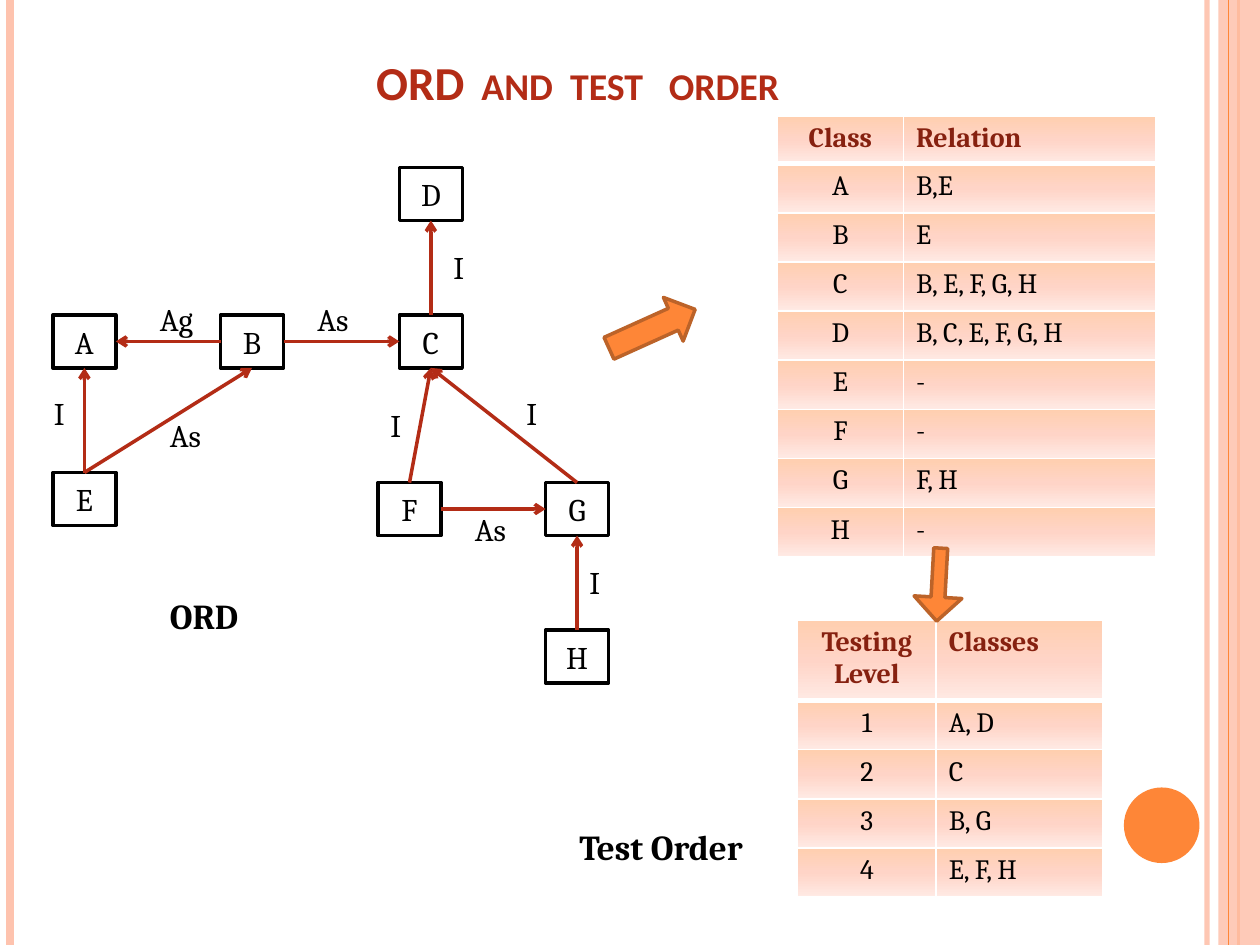
from dataclasses import dataclass
from typing import Any

from lxml.etree import SubElement
from pptx import Presentation
from pptx.dml.color import RGBColor
from pptx.enum.shapes import MSO_CONNECTOR, MSO_SHAPE
from pptx.enum.text import MSO_ANCHOR, PP_ALIGN
from pptx.oxml.ns import qn
from pptx.util import Inches, Pt

BLACK = RGBColor(0x00, 0x00, 0x00)
WHITE = RGBColor(0xFF, 0xFF, 0xFF)
RED = RGBColor(0xB3, 0x2C, 0x16)
DARK_RED = RGBColor(0x86, 0x21, 0x10)
ORANGE = RGBColor(0xFE, 0x86, 0x37)
BROWN = RGBColor(0xBC, 0x63, 0x29)
PINK = RGBColor(0xFE, 0xC3, 0xAE)
CELL_STOPS = (
    (0, RGBColor(0xFF, 0xCF, 0xAF)),
    (50, RGBColor(0xFF, 0xD4, 0xC7)),
    (100, RGBColor(0xFF, 0xEA, 0xE4)),
)
TOP, LEFT, BOTTOM, RIGHT = range(4)
BOX_WIDTH, BOX_HEIGHT = 0.5, 0.42
HEADER_HEIGHT, ROW_HEIGHT = 0.38, 0.39


@dataclass(frozen=True)
class Stripe:
    x: float
    color: RGBColor
    weight: float
    opacity: int = 100


@dataclass(frozen=True)
class ClassBox:
    name: str
    x: float
    y: float


@dataclass(frozen=True)
class Relation:
    source: str
    source_side: int
    target: str
    target_side: int
    label: str
    label_x: float
    label_y: float


@dataclass(frozen=True)
class Grid:
    x: float
    y: float
    widths: tuple[float, ...]
    header_height: float
    rows: tuple[tuple[str, str], ...]


@dataclass(frozen=True)
class BlockArrow:
    frame: tuple[float, float, float, float]
    rotation: float
    shaft: float


BACK_STRIPES = (
    Stripe(9.58, PINK, 3, 93),
    Stripe(0.08, PINK, 4.5),
    Stripe(9.83, ORANGE, 1.5),
)
FRONT_STRIPE = Stripe(9.75, ORANGE, 0.75)
CLASS_BOXES = (
    ClassBox("A", 0.42, 2.5), ClassBox("E", 0.42, 3.75),
    ClassBox("H", 4.33, 5), ClassBox("F", 3, 3.83),
    ClassBox("G", 4.33, 3.83), ClassBox("B", 1.75, 2.5),
    ClassBox("C", 3.17, 2.5), ClassBox("D", 3.17, 1.33),
)
RELATIONS = (
    Relation("C", TOP, "D", BOTTOM, "I", 3.5, 1.92),
    Relation("H", TOP, "G", BOTTOM, "I", 4.58, 4.42),
    Relation("F", RIGHT, "G", LEFT, "As", 3.67, 4),
    Relation("G", TOP, "C", BOTTOM, "I", 4.08, 3.08),
    Relation("F", TOP, "C", BOTTOM, "I", 3, 3.17),
    Relation("B", LEFT, "A", RIGHT, "Ag", 1.17, 2.33),
    Relation("E", TOP, "A", BOTTOM, "I", 0.33, 3.08),
    Relation("E", TOP, "B", BOTTOM, "As", 1.25, 3.25),
    Relation("B", RIGHT, "C", LEFT, "As", 2.42, 2.33),
)
GRIDS = (
    Grid(6.17, 0.92, (1, 2), HEADER_HEIGHT, (
        ("Class", "Relation"), ("A", "B,E"), ("B", "E"), ("C", "B, E, F, G, H"),
        ("D", "B, C, E, F, G, H"), ("E", "-"), ("F", "-"), ("G", "F, H"), ("H", "-"),
    )),
    Grid(6.33, 4.92, (1.1, 1.32), 0.64, (
        ("Testing Level", "Classes"), ("1", "A, D"), ("2", "C"), ("3", "B, G"), ("4", "E, F, H"),
    )),
)
BLOCK_ARROWS = (
    BlockArrow((4.8, 2.42, 0.75, 0.38), 335.7, 0.5),
    BlockArrow((7.16, 4.45, 0.58, 0.38), 93.2, 0.29),
)


def apply_format(target: Any, values: dict[str, Any]) -> None:
    for name, value in values.items():
        setattr(target, name, value)


def write_span(para: Any, text: str, size: float, color: RGBColor = BLACK,
               bold: bool = False, font: str = "Cambria") -> Any:
    span = para.add_run()
    span.text = text
    apply_format(span.font, {"name": font, "size": Pt(size), "bold": bold})
    span.font.color.rgb = color
    return span


def set_opacity(element: Any, percent: int) -> None:
    color = element.find(".//" + qn("a:srgbClr"))
    SubElement(color, qn("a:alpha"), val=str(percent * 1000))


def add_box(page: Any, kind: Any, frame: tuple, fill: RGBColor, line: RGBColor | None = None) -> Any:
    box = page.shapes.add_shape(kind, *map(Inches, frame))
    box.shadow.inherit = False
    box.fill.solid()
    box.fill.fore_color.rgb = fill
    if line is None:
        box.line.fill.background()
    else:
        box.line.color.rgb = line
        box.line.width = Pt(2)
    return box


def add_line(page: Any, color: RGBColor, weight: float, x: float = 0, length: float = 0) -> Any:
    line = page.shapes.add_connector(
        MSO_CONNECTOR.STRAIGHT, Inches(x), 0, Inches(x), Inches(length))
    line.line.color.rgb = color
    line.line.width = Pt(weight)
    SubElement(line.element.spPr, qn("a:effectLst"))
    return line


def add_stripe(page: Any, stripe: Stripe) -> None:
    line = add_line(page, stripe.color, stripe.weight, stripe.x, 7.5)
    if stripe.opacity < 100:
        set_opacity(line.element.spPr, stripe.opacity)


def add_label(page: Any, frame: tuple, text: str, size: float, bold: bool, wrap: bool) -> None:
    label = page.shapes.add_textbox(*map(Inches, frame))
    label.text_frame.word_wrap = wrap
    write_span(label.text_frame.paragraphs[0], text, size, bold=bold)


def add_title(page: Any) -> None:
    box = page.shapes.add_textbox(*map(Inches, (0.5, 0.3, 8.17, 0.62)))
    apply_format(box.text_frame, {"word_wrap": True, "vertical_anchor": MSO_ANCHOR.BOTTOM})
    para = box.text_frame.paragraphs[0]
    para.alignment = PP_ALIGN.CENTER
    span = write_span(para, "ORD  and  test   order", 27, RED, True, "Calibri")
    span._r.get_or_add_rPr().set("cap", "small")


def add_class_box(page: Any, item: ClassBox) -> Any:
    box = add_box(page, MSO_SHAPE.RECTANGLE, (item.x, item.y, BOX_WIDTH, BOX_HEIGHT), WHITE, BLACK)
    box.text_frame.vertical_anchor = MSO_ANCHOR.MIDDLE
    para = box.text_frame.paragraphs[0]
    para.alignment = PP_ALIGN.CENTER
    write_span(para, item.name, 18)
    return box


def add_relation(page: Any, item: Relation, boxes: dict[str, Any]) -> None:
    line = add_line(page, RED, 2)
    line.begin_connect(boxes[item.source], item.source_side)
    line.end_connect(boxes[item.target], item.target_side)
    SubElement(line.element.spPr.find(qn("a:ln")), qn("a:tailEnd"), type="arrow")
    width = 0.27 if item.label == "I" else 0.5
    add_label(page, (item.label_x, item.label_y, width, 0.4), item.label, 18, False, False)


def style_cell(cell: Any, header: bool) -> None:
    properties = cell._tc.get_or_add_tcPr()
    for side in "LRTB":
        weight = 3 if header and side == "B" else 1
        border = SubElement(properties, qn(f"a:ln{side}"), w=str(Pt(weight)))
        SubElement(SubElement(border, qn("a:solidFill")), qn("a:srgbClr"), val=str(WHITE))
    gradient = SubElement(properties, qn("a:gradFill"))
    stops = SubElement(gradient, qn("a:gsLst"))
    for position, color in CELL_STOPS:
        stop = SubElement(stops, qn("a:gs"), pos=str(position * 1000))
        SubElement(stop, qn("a:srgbClr"), val=str(color))
    SubElement(gradient, qn("a:lin"), ang="5400000", scaled="0")


def add_grid(page: Any, grid: Grid) -> None:
    heights = [grid.header_height] + [ROW_HEIGHT] * (len(grid.rows) - 1)
    frame = (grid.x, grid.y, sum(grid.widths), sum(heights))
    table = page.shapes.add_table(len(heights), len(grid.widths), *map(Inches, frame)).table
    apply_format(table, {"first_row": False, "horz_banding": False})
    for column, width in zip(table.columns, grid.widths):
        column.width = Inches(width)
    for index, (height, texts) in enumerate(zip(heights, grid.rows)):
        header = index == 0
        table.rows[index].height = Inches(height)
        for position, text in enumerate(texts):
            cell = table.cell(index, position)
            style_cell(cell, header)
            para = cell.text_frame.paragraphs[0]
            para.alignment = PP_ALIGN.LEFT if position else PP_ALIGN.CENTER
            write_span(para, text, 16, DARK_RED if header else BLACK, header)


def add_block_arrow(page: Any, item: BlockArrow) -> None:
    arrow = add_box(page, MSO_SHAPE.RIGHT_ARROW, item.frame, ORANGE, BROWN)
    arrow.adjustments[0] = item.shaft
    arrow.rotation = item.rotation


def main() -> None:
    deck = Presentation()
    apply_format(deck, {"slide_width": Inches(10), "slide_height": Inches(7.5)})
    page = deck.slides.add_slide(deck.slide_layouts[6])
    for stripe in BACK_STRIPES:
        add_stripe(page, stripe)
    band = add_box(page, MSO_SHAPE.RECTANGLE, (9.67, 0, 0.33, 7.5), PINK)
    set_opacity(band.element.spPr, 87)
    add_stripe(page, FRONT_STRIPE)
    add_box(page, MSO_SHAPE.OVAL, (8.92, 6.25, 0.6, 0.6), ORANGE)
    add_title(page)
    boxes = {item.name: add_class_box(page, item) for item in CLASS_BOXES}
    for relation in RELATIONS:
        add_relation(page, relation, boxes)
    for grid in GRIDS:
        add_grid(page, grid)
    add_label(page, (4.5, 6.5, 1.83, 0.44), "Test Order", 20, True, True)
    add_label(page, (1.25, 4.67, 1.38, 0.44), "ORD", 20, True, True)
    for arrow in BLOCK_ARROWS:
        add_block_arrow(page, arrow)
    deck.save("out.pptx")


if __name__ == "__main__":
    main()
